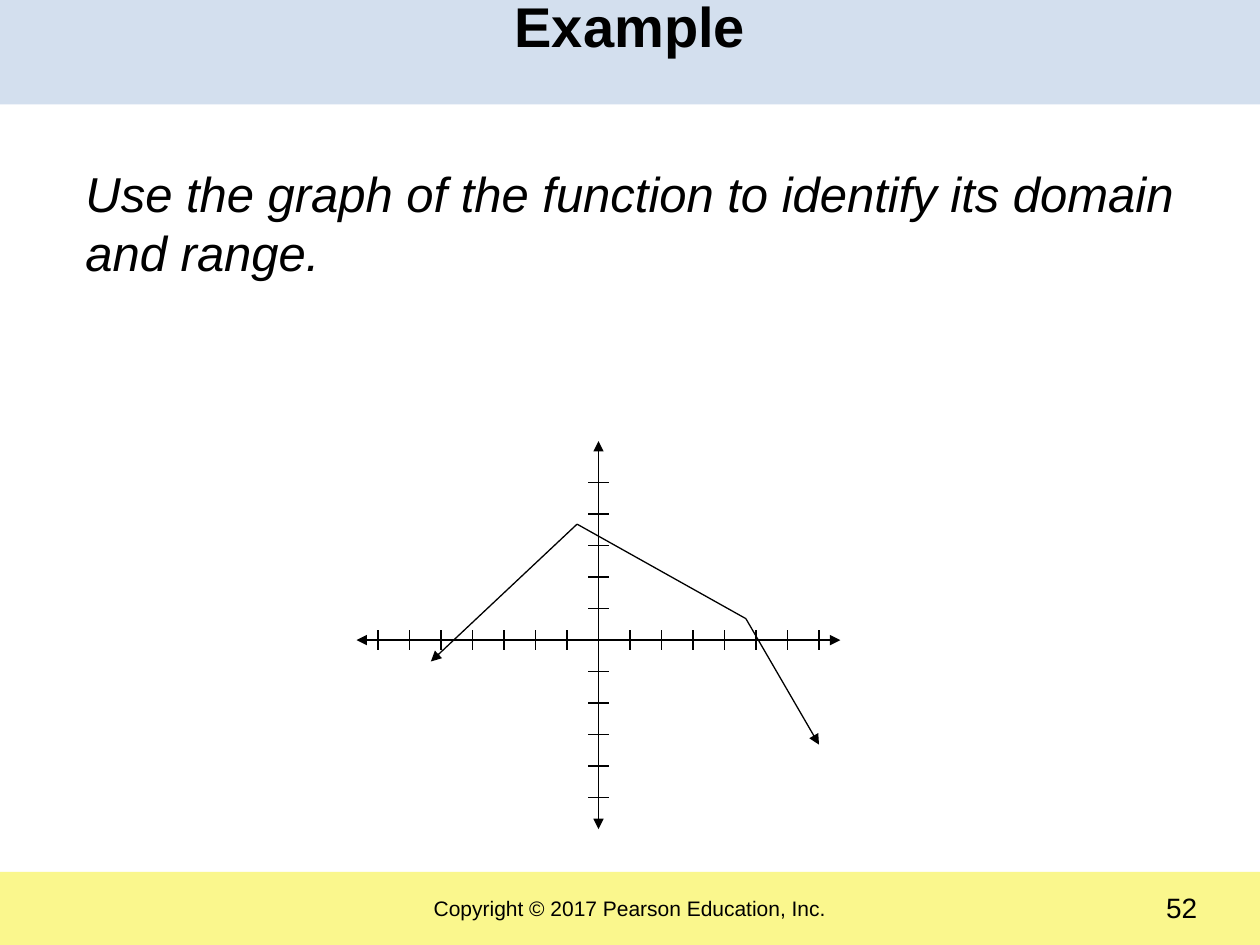
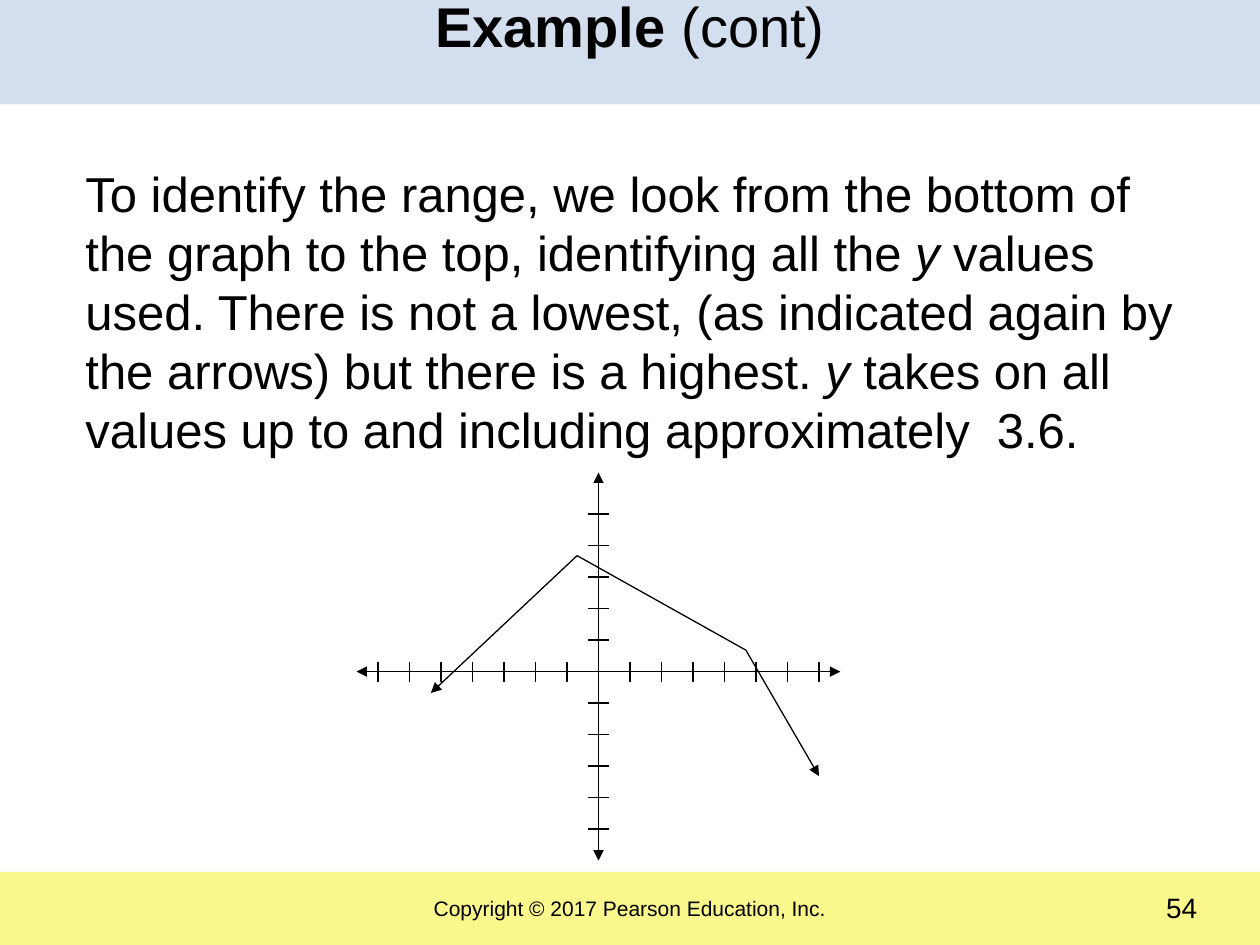
"""Build two slides about reading domain and range from a graph."""
from typing import NamedTuple

from pptx import Presentation
from pptx import util as u
from pptx.dml import color
from pptx.enum import shapes, text
from pptx.oxml import ns, xmlchemy

FONT = "Arial"
BLACK = "000000"
TITLE_BAND = "D3DFEE"
FOOTER_BAND = "FAF78D"
COPYRIGHT = "Copyright © 2017 Pearson Education, Inc."

ORIGIN_X = 4.75
UNIT = 0.25
TICK = 0.08


class Span(NamedTuple):
    """A stretch of text with one style."""
    words: str
    bold: bool = False
    italic: bool = False


class Area(NamedTuple):
    """A rectangle in inches."""
    left: float
    top: float
    width: float
    height: float


class Stroke(NamedTuple):
    """A line between two offsets from the graph's origin, in inches."""
    x1: float
    y1: float
    x2: float
    y2: float
    head: bool = False
    tail: bool = False


class Example(NamedTuple):
    """The content of one slide."""
    title: list[Span]
    body: list[Span]
    number: str
    origin_y: float


TITLE_AREA = Area(1, -0.07, 8, 0.51)
BODY_AREA = Area(0.58, 1.25, 9.02, 5.42)
NUMBER_AREA = Area(7.27, 7.02, 2.33, 0.33)
TITLE_BAND_AREA = Area(0, 0, 10, 0.83)
FOOTER_BAND_AREA = Area(0, 6.92, 10, 0.58)

AXES = [
    Stroke(0, -1.58, 0, 1.5, head=True, tail=True),
    Stroke(-1.92, 0, 1.92, 0, head=True, tail=True),
]
CURVE = [
    Stroke(-0.17, -0.92, -1.33, 0.17, tail=True),
    Stroke(1.17, -0.17, 1.75, 0.83, tail=True),
    Stroke(-0.17, -0.92, 1.17, -0.17),
]
Y_TICKS = [Stroke(-TICK, n * UNIT, TICK, n * UNIT) for n in range(-5, 6) if n]
X_TICKS = [Stroke(n * UNIT, -TICK, n * UNIT, TICK) for n in range(-7, 8) if n]

EXAMPLES = [
    Example(
        [Span("Example", bold=True)],
        [Span("Use the graph of the function to identify its domain and range.",
              italic=True)],
        "52", 5.08),
    Example(
        [Span("Example ", bold=True), Span("(cont)")],
        [Span("To identify the range, we look from the bottom of the graph to "
              "the top, identifying all the "),
         Span("y", italic=True),
         Span(" values used. There is not a lowest, (as indicated again by the "
              "arrows) but there is a highest. "),
         Span("y", italic=True),
         Span(" takes on all values up to and including approximately  3.6.")],
        "54", 5.33),
]


def rgb(value: str) -> color.RGBColor:
    """Turn a hex string into a colour."""
    return color.RGBColor.from_string(value)


def lengths(area: Area) -> list[u.Length]:
    """Give an area's four measures as lengths."""
    return [u.Inches(measure) for measure in area]


def write(box, spans: list[Span], size: int,
          align=text.PP_ALIGN.LEFT) -> None:
    """Write the spans as the single paragraph of a box."""
    box.text_frame.word_wrap = True
    para = box.text_frame.paragraphs[0]
    para.alignment = align
    for span in spans:
        run = para.add_run()
        run.text = span.words
        run.font.name = FONT
        run.font.size = u.Pt(size)
        run.font.bold = span.bold
        run.font.italic = span.italic
        run.font.color.rgb = rgb(BLACK)


def clear_margins(box) -> None:
    """Remove the inner margins of a box."""
    frame = box.text_frame
    frame.margin_left = frame.margin_right = u.Inches(0)
    frame.margin_top = frame.margin_bottom = u.Inches(0)


def add_band(page, area: Area, fill: str):
    """Add a plain coloured band."""
    band = page.shapes.add_shape(shapes.MSO_SHAPE.RECTANGLE, *lengths(area))
    band.shadow.inherit = False
    band.fill.solid()
    band.fill.fore_color.rgb = rgb(fill)
    band.line.fill.background()
    return band


def add_stroke(group, stroke: Stroke, origin_y: float) -> None:
    """Draw one line of the graph, with its arrowheads."""
    line = group.shapes.add_connector(
        shapes.MSO_CONNECTOR.STRAIGHT,
        u.Inches(ORIGIN_X + stroke.x1), u.Inches(origin_y + stroke.y1),
        u.Inches(ORIGIN_X + stroke.x2), u.Inches(origin_y + stroke.y2))
    line.line.width = u.Pt(0.75)
    line.line.color.rgb = rgb(BLACK)
    properties = line.element.spPr
    outline = properties.find(ns.qn("a:ln"))
    for tag, wanted in (("a:headEnd", stroke.head), ("a:tailEnd", stroke.tail)):
        if wanted:
            arrow = xmlchemy.OxmlElement(tag)
            arrow.set("type", "triangle")
            outline.append(arrow)
    properties.append(xmlchemy.OxmlElement("a:effectLst"))


def add_frame(page, number: str) -> None:
    """Add the bands, copyright line and page number."""
    footer = add_band(page, FOOTER_BAND_AREA, FOOTER_BAND)
    clear_margins(footer)
    footer.text_frame.vertical_anchor = text.MSO_ANCHOR.MIDDLE
    write(footer, [Span(COPYRIGHT)], 12, text.PP_ALIGN.CENTER)
    add_band(page, TITLE_BAND_AREA, TITLE_BAND)
    box = page.shapes.add_textbox(*lengths(NUMBER_AREA))
    write(box, [Span(number)], 16, text.PP_ALIGN.RIGHT)


def add_example(deck, example: Example) -> None:
    """Add one example slide."""
    page = deck.slides.add_slide(deck.slide_layouts[6])
    add_frame(page, example.number)
    title = page.shapes.add_textbox(*lengths(TITLE_AREA))
    clear_margins(title)
    write(title, example.title, 32, text.PP_ALIGN.CENTER)
    body = page.shapes.add_textbox(*lengths(BODY_AREA))
    write(body, example.body, 28)
    graph = page.shapes.add_group_shape()
    for stroke in AXES + CURVE + Y_TICKS + X_TICKS:
        add_stroke(graph, stroke, example.origin_y)


def main() -> None:
    """Build and save the deck."""
    deck = Presentation()
    deck.slide_width = u.Inches(10)
    deck.slide_height = u.Inches(7.5)
    for example in EXAMPLES:
        add_example(deck, example)
    deck.save("out.pptx")


if __name__ == "__main__":
    main()
